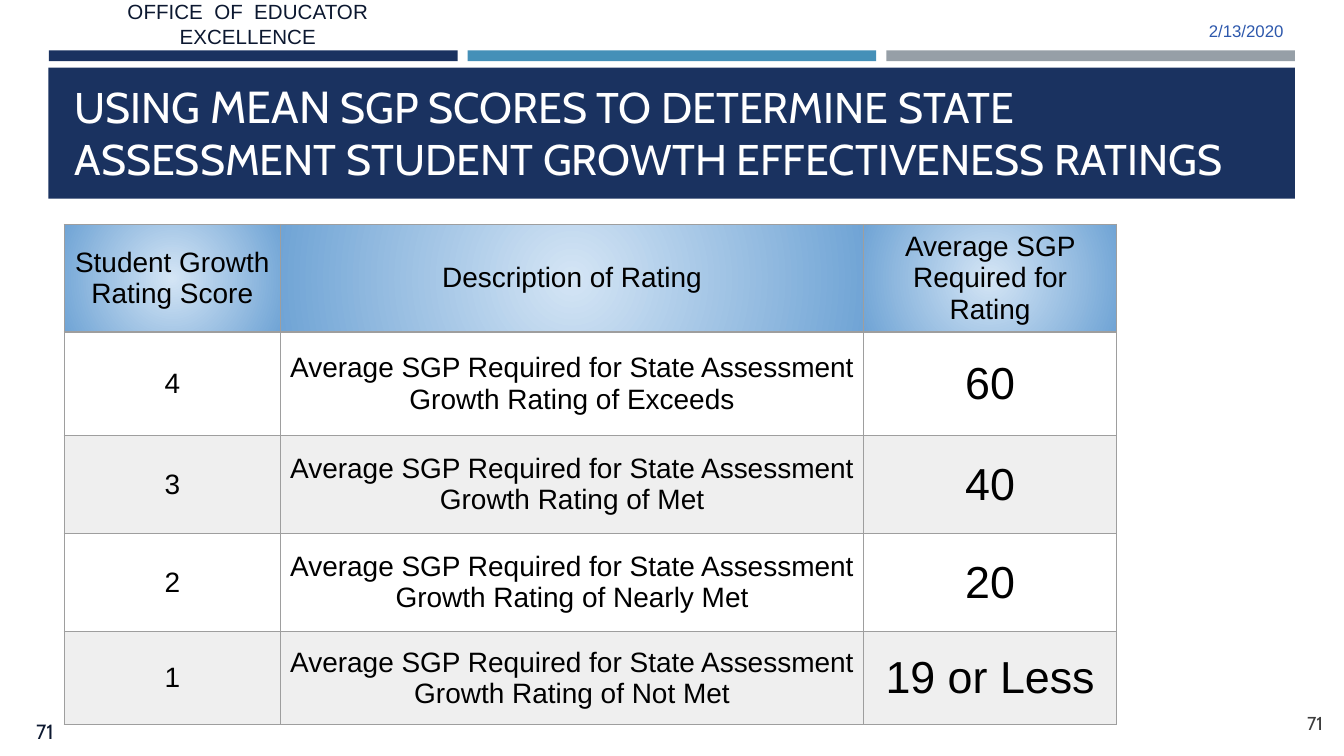
from lxml import etree
from pptx import Presentation
from pptx.dml.color import RGBColor
from pptx.enum.shapes import MSO_SHAPE as Shape
from pptx.enum.text import MSO_ANCHOR as Anchor, MSO_AUTO_SIZE as AutoSize, PP_ALIGN as Align
from pptx.oxml import parse_xml
from pptx.oxml.ns import nsdecls, qn
from pptx.util import Inches, Pt

NAVY = RGBColor(0x1A, 0x32, 0x60)
BLUE = RGBColor(0x45, 0x90, 0xB8)
GRAY = RGBColor(0x96, 0x9F, 0xA7)
DARK_NAVY = RGBColor(0x0C, 0x18, 0x30)
DATE_BLUE = RGBColor(0x2D, 0x58, 0xAC)
CHARCOAL = RGBColor(0x3D, 0x3D, 0x3D)
BORDER = RGBColor(0x9E, 0x9E, 0x9E)
BAND = RGBColor(0xEF, 0xEF, 0xEF)
GLOW_IN = RGBColor(0xD4, 0xE5, 0xF5)
GLOW_OUT = RGBColor(0x70, 0xA4, 0xD5)
BLACK = RGBColor(0, 0, 0)
WHITE = RGBColor(0xFF, 0xFF, 0xFF)

COLUMNS, ROWS = 100, 56.25  # grid units of a tenth of an inch, 16:9


class SlideBuilder:
    body_font, title_font = "Arial", "Cabin"

    def __init__(self, deck):
        self.unit = deck.slide_width / COLUMNS
        self.page = deck.slides.add_slide(deck.slide_layouts[5])

    def grid(self, *lengths):
        return [round(length * self.unit) for length in lengths]

    def style(self, para, size, color, font, align):
        para.alignment = align
        para.font.size, para.font.name = Pt(size), font
        para.font.color.rgb = color

    def frame(self, box, anchor):
        frame = box.text_frame
        frame.word_wrap, frame.auto_size = True, AutoSize.NONE
        frame.vertical_anchor = anchor
        frame.margin_left = frame.margin_right = Inches(0.08)
        frame.margin_top = frame.margin_bottom = Inches(0.04)
        return frame

    def bar(self, area, color):
        bar = self.page.shapes.add_shape(Shape.RECTANGLE, *self.grid(*area))
        bar.shadow.inherit = False
        bar.fill.solid()
        bar.fill.fore_color.rgb = color
        bar.line.fill.background()

    def text(self, area, words, size, color, font, align=Align.RIGHT, anchor=Anchor.MIDDLE):
        box = self.page.shapes.add_textbox(*self.grid(*area))
        para = self.frame(box, anchor).paragraphs[0]
        para.text = words
        self.style(para, size, color, font, align)

    def title(self, area, spans):
        box = self.page.shapes.title
        box.left, box.top, box.width, box.height = self.grid(*area)
        para = self.frame(box, Anchor.BOTTOM).paragraphs[0]
        self.style(para, spans[0][1], WHITE, self.title_font, Align.LEFT)
        for words, size in spans:
            span = para.add_run()
            span.text, span.font.size = words, Pt(size)
        self.page.shapes._spTree.append(box._element)  # in front of its band

    def table(self, corner, widths, heights, rows):
        area = self.grid(*corner, sum(widths), sum(heights))
        table = self.page.shapes.add_table(len(rows), len(widths), *area).table
        for column, width in zip(table.columns, self.grid(*widths)):
            column.width = width
        for r, (words, height) in enumerate(zip(rows, self.grid(*heights))):
            table.rows[r].height = height
            for c, word in enumerate(words):
                self.cell(table.cell(r, c), word, r, 24 if r and c == 2 else 15)

    def cell(self, cell, words, row, size):
        cell.vertical_anchor = Anchor.MIDDLE
        cell.margin_left = cell.margin_right = Inches(0.06)
        cell.margin_top = cell.margin_bottom = 0
        para = cell.text_frame.paragraphs[0]
        para.text = words
        self.style(para, size, BLACK, self.body_font, Align.CENTER)
        props = cell._tc.get_or_add_tcPr()
        for side in ("lnL", "lnR", "lnT", "lnB"):
            line = etree.SubElement(props, qn(f"a:{side}"), w=str(Pt(0.75)))
            fill = etree.SubElement(line, qn("a:solidFill"))
            etree.SubElement(fill, qn("a:srgbClr"), val=str(BORDER))
        if row == 0:
            props.append(self.glow())
        elif row % 2:
            cell.fill.background()
        else:
            cell.fill.solid()
            cell.fill.fore_color.rgb = BAND

    def glow(self):
        return parse_xml(
            f'<a:gradFill {nsdecls("a")} rotWithShape="1"><a:gsLst>'
            f'<a:gs pos="0"><a:srgbClr val="{GLOW_IN}"/></a:gs>'
            f'<a:gs pos="100000"><a:srgbClr val="{GLOW_OUT}"/></a:gs></a:gsLst>'
            '<a:path path="circle"><a:fillToRect l="50000" t="50000" r="50000" b="50000"/>'
            '</a:path></a:gradFill>')


def main():
    deck = Presentation()
    deck.slide_width, deck.slide_height = Inches(COLUMNS / 10), Inches(ROWS / 10)
    slide = SlideBuilder(deck)

    # Three-colour strip and title band
    for index, color in enumerate((NAVY, BLUE, GRAY)):
        slide.bar((3.65 + 31.15 * index, 3.75, 30.4, 0.8), color)
    slide.bar((3.6, 5.03, 92.75, 9.75), NAVY)

    # Header texts
    slide.text((3.3, 1.2, 30.3, 2.8), " OFFICE  OF  EDUCATOR  EXCELLENCE", 11, DARK_NAVY,
               slide.body_font, Align.CENTER, Anchor.BOTTOM)
    slide.text((72.9, 0.83, 23.4, 3), "2/13/2020", 9, DATE_BLUE, slide.body_font)

    # Ratings table
    ratings = (("4", "Exceeds", "60"), ("3", "Met", "40"),
               ("2", "Nearly Met", "20"), ("1", "Not Met", "19 or Less"))
    rows = [("Student Growth Rating Score", "Description of Rating",
             "Average SGP Required for Rating")]
    rows += [(score, f"Average SGP Required for State Assessment Growth Rating of {rating}", sgp)
             for score, rating, sgp in ratings]
    slide.table((4.77, 16.7), (16.1, 43.4, 18.8), (8, 7.7, 7.3, 7.3, 6.9), rows)

    # Page numbers
    slide.text((90.65, 52.3, 8.6, 3), "71", 10, CHARCOAL, slide.title_font)
    slide.text((0, 52.5, 4.8, 3.75), "71", 11, DARK_NAVY, slide.title_font)

    slide.title((4.75, 5.8, 90.5, 8.3), (
        ("USING ", 23), ("MEAN", 24),
        (" SGP SCORES TO DETERMINE STATE ASSESSMENT STUDENT GROWTH EFFECTIVENESS RATINGS", 23)))

    deck.save("out.pptx")


if __name__ == "__main__":
    main()
